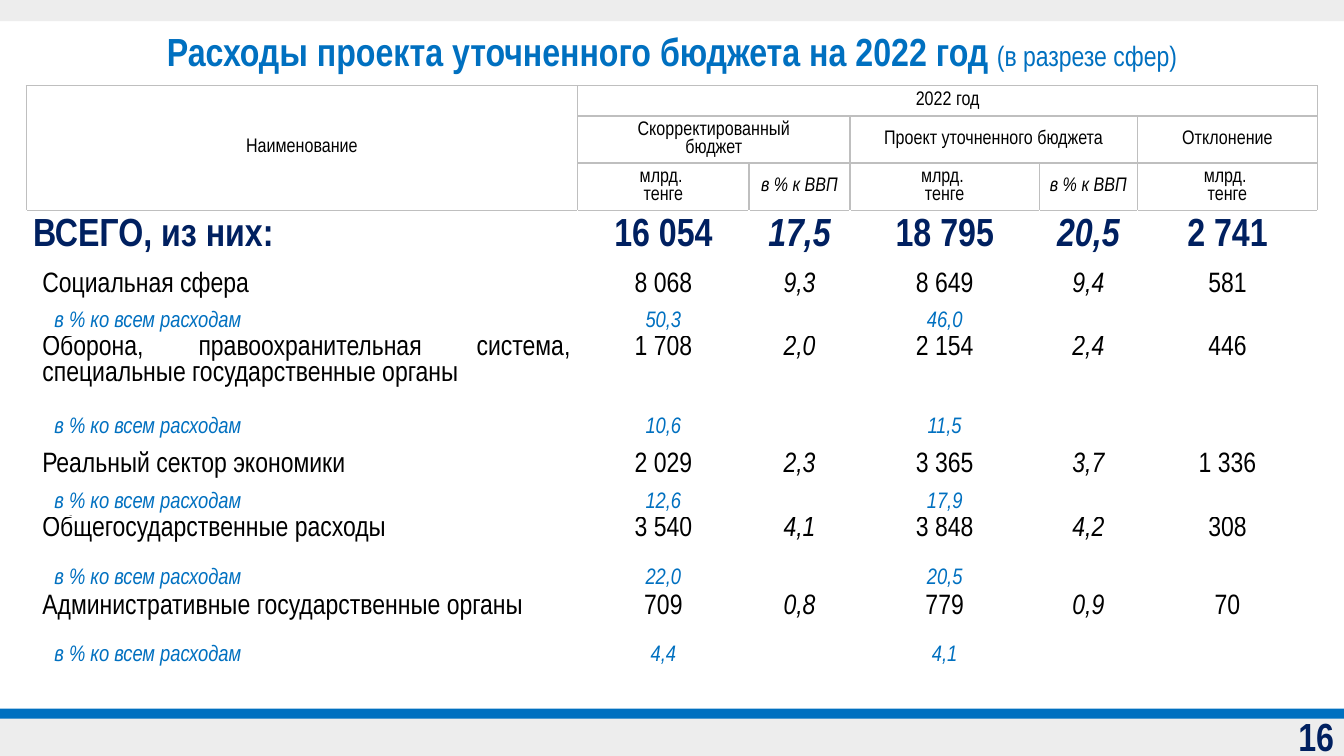
from lxml import etree
from pptx import Presentation
from pptx.dml.color import RGBColor
from pptx.enum.shapes import MSO_SHAPE as Shape
from pptx.enum.text import MSO_ANCHOR as Anchor, PP_ALIGN as Align
from pptx.oxml.ns import qn
from pptx.util import Inches, Pt

FONT = "Arial Narrow"
COLORS = {"blue": "0070C0", "navy": "002060", "black": "000000",
          "band": "EDEDED", "border": "BFBFBF"}


def style(font, size, color, bold=False, italic=False):
    font.name, font.size, font.bold, font.italic = FONT, Pt(size), bold, italic
    font.color.rgb = RGBColor.from_string(COLORS[color])


def add_borders(cell, sides):
    """Draw 1 pt borders on the given sides (L, R, T, B), before the cell fill."""
    properties = cell._tc.get_or_add_tcPr()
    for position, side in enumerate(sides):
        line = etree.Element(qn(f"a:ln{side}"), w=str(Pt(1)))
        fill = etree.SubElement(line, qn("a:solidFill"))
        etree.SubElement(fill, qn("a:srgbClr"), val=COLORS["border"])
        properties.insert(position, line)


presentation = Presentation()
presentation.slide_width, presentation.slide_height = Inches(13.33), Inches(7.5)
slide = presentation.slides.add_slide(presentation.slide_layouts[5])

# Bands at the top and bottom
for top, height, color in [(7.12, 0.38, "band"), (7.03, 0.1, "blue"), (0, 0.21, "band")]:
    band = slide.shapes.add_shape(Shape.RECTANGLE, 0, Inches(top), Inches(13.33), Inches(height))
    band.shadow.inherit = False
    band.fill.solid()
    band.fill.fore_color.rgb = RGBColor.from_string(COLORS[color])
    band.line.fill.background()

# Title
title = slide.shapes.title
title.left, title.top, title.width, title.height = 0, Inches(0.24), Inches(13.33), Inches(0.58)
title.text_frame.vertical_anchor = Anchor.MIDDLE
paragraph = title.text_frame.paragraphs[0]
paragraph.alignment, paragraph.line_spacing = Align.CENTER, 0.9
for text, size, bold in [("Расходы проекта уточненного бюджета на 2022 год ", 28, True),
                         ("(в разрезе сфер)", 20, False)]:
    run = paragraph.add_run()
    run.text = text
    style(run.font, size, "blue", bold)

# Page number
page_number = slide.shapes.add_textbox(Inches(10.33), Inches(7.1), Inches(3), Inches(0.4))
page_number.text_frame.word_wrap = True
page_number.text_frame.vertical_anchor = Anchor.MIDDLE
paragraph = page_number.text_frame.paragraphs[0]
paragraph.text, paragraph.alignment = "16", Align.RIGHT
style(paragraph.font, 28, "navy", bold=True)

# Budget table
UNIT, GDP, SHARE = "млрд. \nтенге", "в % к ВВП", "в % ко всем расходам"
rows = [
    ("header", 0.3, ["Наименование", "2022 год"]),
    ("header", 0.43, ["", "Скорректированный\nбюджет", "", "Проект уточненного бюджета", "", "Отклонение"]),
    ("header", 0.43, ["", UNIT, GDP, UNIT, GDP, UNIT]),
    ("total", 0.52, ["ВСЕГО, из них:", "16 054", "17,5", "18 795", "20,5", "2 741"]),
    ("sphere", 0.45, ["Социальная сфера", "8 068", "9,3", "8 649", "9,4", "581"]),
    ("share", 0.27, [SHARE, "50,3", "", "46,0"]),
    ("sphere top", 0.77, ["Оборона, правоохранительная система, специальные государственные органы",
                          "1 708", "2,0", "2 154", "2,4", "446"]),
    ("share", 0.29, [SHARE, "10,6", "", "11,5"]),
    ("sphere", 0.47, ["Реальный сектор экономики", "2 029", "2,3", "3 365", "3,7", "1 336"]),
    ("share", 0.23, [SHARE, "12,6", "", "17,9"]),
    ("sphere top", 0.47, ["Общегосударственные расходы", "3 540", "4,1", "3 848", "4,2", "308"]),
    ("share", 0.3, [SHARE, "22,0", "", "20,5"]),
    ("sphere top", 0.47, ["Административные государственные органы", "709", "0,8", "779", "0,9", "70"]),
    ("share", 0.3, [SHARE, "4,4", "", "4,1"]),
]
# Size, colour, bold, left margin of the first column
row_styles = {"header": (14, "black", False, 0.07), "total": (28, "navy", True, 0.07),
              "sphere": (20, "black", False, 0.16), "share": (16, "blue", False, 0.28)}
column_widths = [5.47, 1.7, 1, 1.88, 0.97, 1.79]

table = slide.shapes.add_table(len(rows), len(column_widths), Inches(0.26), Inches(0.85),
                               Inches(sum(column_widths)), Inches(5.7)).table
table.first_row = table.horz_banding = False
for column, width in zip(table.columns, column_widths):
    column.width = Inches(width)

for row_index, (kind, height, texts) in enumerate(rows):
    table.rows[row_index].height = Inches(height)
    kind, *top = kind.split()
    size, color, bold, indent = row_styles[kind]
    for column_index in range(len(column_widths)):
        cell = table.cell(row_index, column_index)
        cell.margin_top = cell.margin_bottom = 0
        cell.margin_left = Inches(indent if column_index == 0 else 0.07)
        cell.margin_right = Inches(0.07)
        cell.vertical_anchor = Anchor.TOP if top else Anchor.MIDDLE
        cell.fill.background()
        if kind == "header":
            add_borders(cell, "LRTB")
        elif kind == "total":
            add_borders(cell, "T")
        text = texts[column_index] if column_index < len(texts) else ""
        cell.text_frame.text = text
        is_label = column_index == 0 and kind != "header"
        is_italic = kind == "share" or text == GDP or (kind != "header" and column_index in (2, 4))
        for paragraph in cell.text_frame.paragraphs:
            paragraph.alignment = Align.JUSTIFY if is_label else Align.CENTER
            # Row heights follow run sizes; an empty cell needs a small end mark
            for run in paragraph.runs:
                style(run.font, size, color, bold, is_italic)
            if not text:
                etree.SubElement(paragraph._p, qn("a:endParaRPr"), sz="800")

for first, last in [((0, 0), (2, 0)), ((0, 1), (0, 5)), ((1, 1), (1, 2)), ((1, 3), (1, 4))]:
    table.cell(*first).merge(table.cell(*last))

presentation.save("out.pptx")
